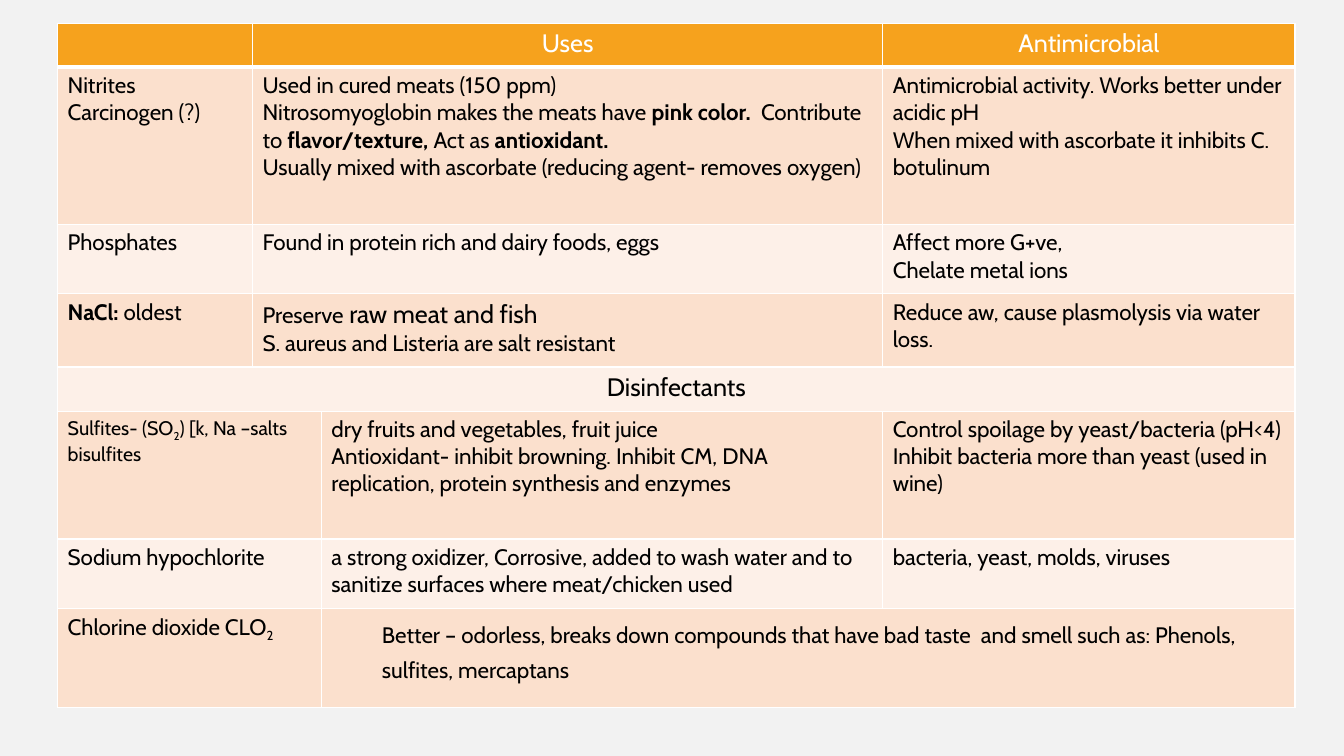
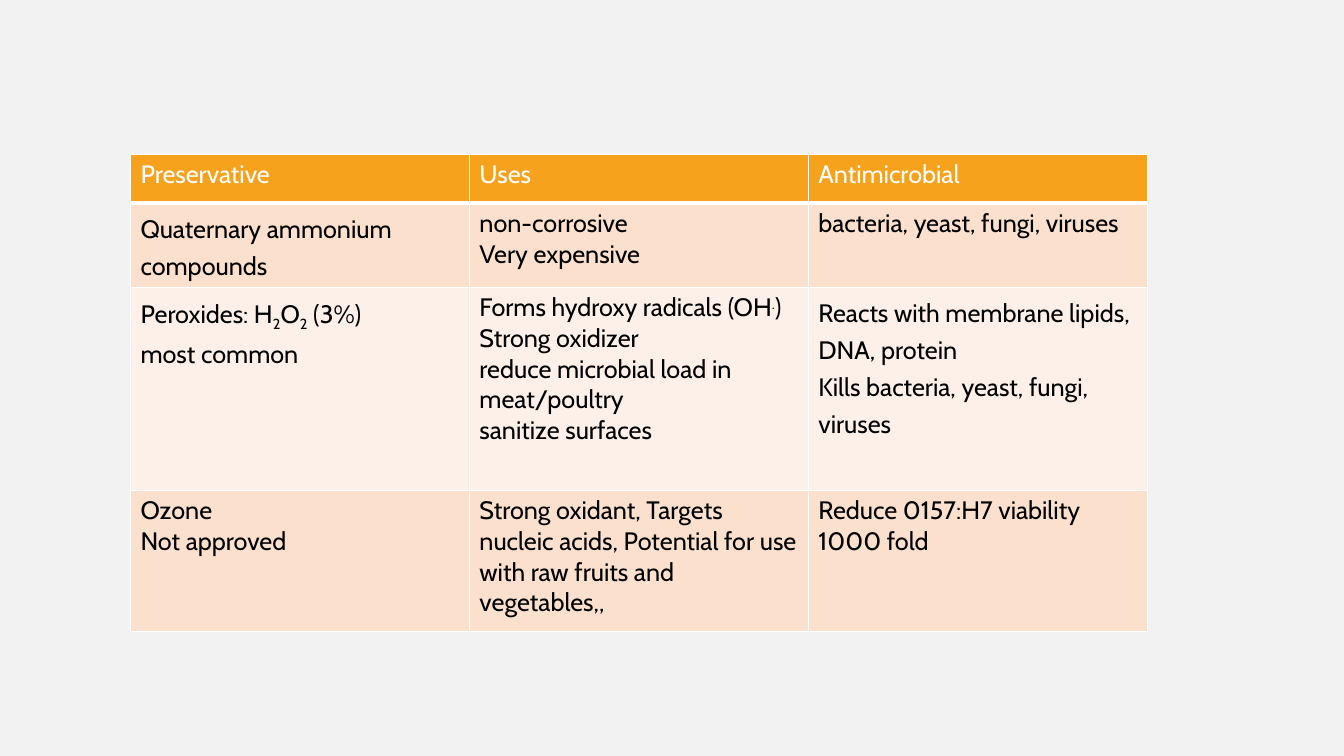
from dataclasses import dataclass

from lxml.etree import SubElement
from pptx import Presentation
from pptx.dml.color import RGBColor
from pptx.enum.text import PP_ALIGN
from pptx.oxml.ns import qn
from pptx.util import Pt

FONT = "Cabin"
BACKGROUND = RGBColor(0xF2, 0xF2, 0xF2)
HEADER = RGBColor(0xF6, 0xA2, 0x1D)
BANDS = (RGBColor(0xFD, 0xF0, 0xE8), RGBColor(0xFB, 0xE0, 0xCD))
WHITE = RGBColor(0xFF, 0xFF, 0xFF)
BLACK = RGBColor(0, 0, 0)
HEADER_SIZE = 18


@dataclass
class Run:
    text: str
    size: int = 0
    bold: bool = False
    baseline: int = 0


@dataclass
class Para:
    runs: list
    centered: bool = False
    level: int = 0
    left: int = 0
    spacing: float = 0


def bold(text):
    return Run(text, bold=True)


def centered(text, size=0):
    return Para([Run(text, size)], centered=True)


def nested(text, spacing=0, left=0):
    return Para([text], level=1, left=left, spacing=spacing)


SUB_2 = Run("2", baseline=-25)

# A cell is a list of paragraphs; None marks a cell covered by the span to its left.
PRESERVATIVES = [
    [[], [centered("Uses")], None, [centered("Antimicrobial")]],
    [["Nitrites", "Carcinogen (?)"],
     ["Used in cured meats (150 ppm)",
      Para(["Nitrosomyoglobin makes the meats have ", bold("pink color.  "),
            "Contribute to ", bold("flavor/texture, "), "Act as ",
            bold("antioxidant.")]),
      "Usually mixed with ascorbate (reducing agent- removes oxygen)"],
     None,
     ["Antimicrobial activity. Works better under acidic pH",
      "When mixed with ascorbate it inhibits C. botulinum"]],
    [["Phosphates"], ["Found in protein rich and dairy foods, eggs"], None,
     ["Affect more G+ve,", "Chelate metal ions"]],
    [[Para([bold("NaCl: "), "oldest"])],
     [Para(["Preserve", Run(" raw meat and fish", 18)]),
      "S. aureus and Listeria are salt resistant"],
     None,
     ["Reduce aw, cause plasmolysis via water loss."]],
    [[centered("Disinfectants", 18)], None, None, None],
    [[Para([Run("Sulfites- (SO", 14), Run("2", 14, baseline=-25),
            Run(") [k, Na –salts bisulfites", 14)])],
     None,
     ["dry fruits and vegetables, fruit juice",
      "Antioxidant- inhibit browning. Inhibit CM, DNA replication, "
      "protein synthesis and enzymes"],
     ["Control spoilage by yeast/bacteria (pH<4)",
      "Inhibit bacteria more than yeast (used in wine)"]],
    [["Sodium hypochlorite"], None,
     ["a strong oxidizer, Corrosive, added to wash water and to sanitize "
      "surfaces where meat/chicken used"],
     ["bacteria, yeast, molds, viruses"]],
    [[Para(["Chlorine dioxide CLO", SUB_2])], None,
     [nested("Better – odorless, breaks down compounds that have bad taste  "
             "and smell such as: Phenols, sulfites, mercaptans", 1.3, 36)],
     None],
]

SANITIZERS = [
    [["Preservative"], ["Uses"], ["Antimicrobial"]],
    [[Para(["Quaternary ammonium compounds"], spacing=1.2)],
     ["non-corrosive", "Very expensive"],
     ["bacteria, yeast, fungi, viruses"]],
    [[Para(["Peroxides: H", SUB_2, "O", SUB_2, " (3%)"], spacing=1.2),
      Para(["most common"], spacing=1.2)],
     [Para(["Forms hydroxy radicals (OH", Run(".", baseline=30), ")"]),
      "Strong oxidizer",
      nested("reduce microbial load in meat/poultry"),
      nested("sanitize surfaces")],
     [nested("Reacts with membrane lipids, DNA, protein", 1.2),
      nested("Kills bacteria, yeast, fungi, viruses", 1.2)]],
    [["Ozone", "Not approved"],
     ["Strong oxidant, Targets nucleic acids, Potential for use with raw "
      "fruits and vegetables,,"],
     ["Reduce 0157:H7 viability 1000 fold"]],
]


def add_run(p, run, size, color):
    run = Run(run) if isinstance(run, str) else run
    r = p.add_run()
    r.text = run.text
    r.font.name = FONT
    r.font.size = Pt(run.size or size)
    r.font.bold = run.bold
    r.font.color.rgb = color
    if run.baseline:
        r._r.get_or_add_rPr().set("baseline", str(run.baseline * 1000))


def write_cell(cell, paras, size, color):
    tf = cell.text_frame
    for i, para in enumerate(paras):
        para = Para([para]) if isinstance(para, str) else para
        p = tf.add_paragraph() if i else tf.paragraphs[0]
        p.alignment = PP_ALIGN.CENTER if para.centered else PP_ALIGN.LEFT
        p.level = para.level
        if para.spacing:
            p.line_spacing = para.spacing
        pPr = p._p.get_or_add_pPr()
        pPr.set("marL", str(Pt(para.left)))
        pPr.set("indent", "0")
        for run in para.runs:
            add_run(p, run, size, color)


def style_cell(cell, row):
    """Fill by row band; each inner horizontal edge belongs to the cell above."""
    tcPr = cell._tc.get_or_add_tcPr()
    edges = {"lnL": 1, "lnR": 1, "lnT": 1, "lnB": 1}
    if row == 0:
        edges["lnB"] = 3
    else:
        del edges["lnT"]
    for tag, width in edges.items():
        ln = SubElement(tcPr, qn(f"a:{tag}"), w=str(Pt(width)))
        fill = SubElement(ln, qn("a:solidFill"))
        SubElement(fill, qn("a:srgbClr"), val=str(WHITE))
    cell.fill.solid()
    cell.fill.fore_color.rgb = BANDS[row % 2] if row else HEADER


def span_end(cells, col):
    end = col
    while end + 1 < len(cells) and cells[end + 1] is None:
        end += 1
    return end


def add_table(s, left, top, widths, heights, rows, size):
    table = s.shapes.add_table(len(rows), len(widths), Pt(left), Pt(top),
                               Pt(sum(widths)), Pt(sum(heights))).table
    table.first_row = table.horz_banding = False
    for column, width in zip(table.columns, widths):
        column.width = Pt(width)
    for i, cells in enumerate(rows):
        table.rows[i].height = Pt(heights[i])
        for j, paras in enumerate(cells):
            cell = table.cell(i, j)
            style_cell(cell, i)
            if paras is None:
                continue
            end = span_end(cells, j)
            if end > j:
                cell.merge(table.cell(i, end))
            write_cell(cell, paras, size if i else HEADER_SIZE,
                       BLACK if i else WHITE)


def add_slide(prs):
    s = prs.slides.add_slide(prs.slide_layouts[6])
    s.background.fill.solid()
    s.background.fill.fore_color.rgb = BACKGROUND
    return s


def main():
    prs = Presentation()
    prs.slide_width, prs.slide_height = Pt(960), Pt(540)
    add_table(add_slide(prs), 41.2, 16.6, [139.2, 49.2, 401, 294.5],
              [31.5, 112.2, 49.6, 52.3, 31.5, 91.4, 49.6, 70.6],
              PRESERVATIVES, 16)
    add_table(add_slide(prs), 93.2, 110.2, [242.1] * 3,
              [35, 60, 145, 100.8], SANITIZERS, 18)
    prs.save("out.pptx")


if __name__ == "__main__":
    main()
